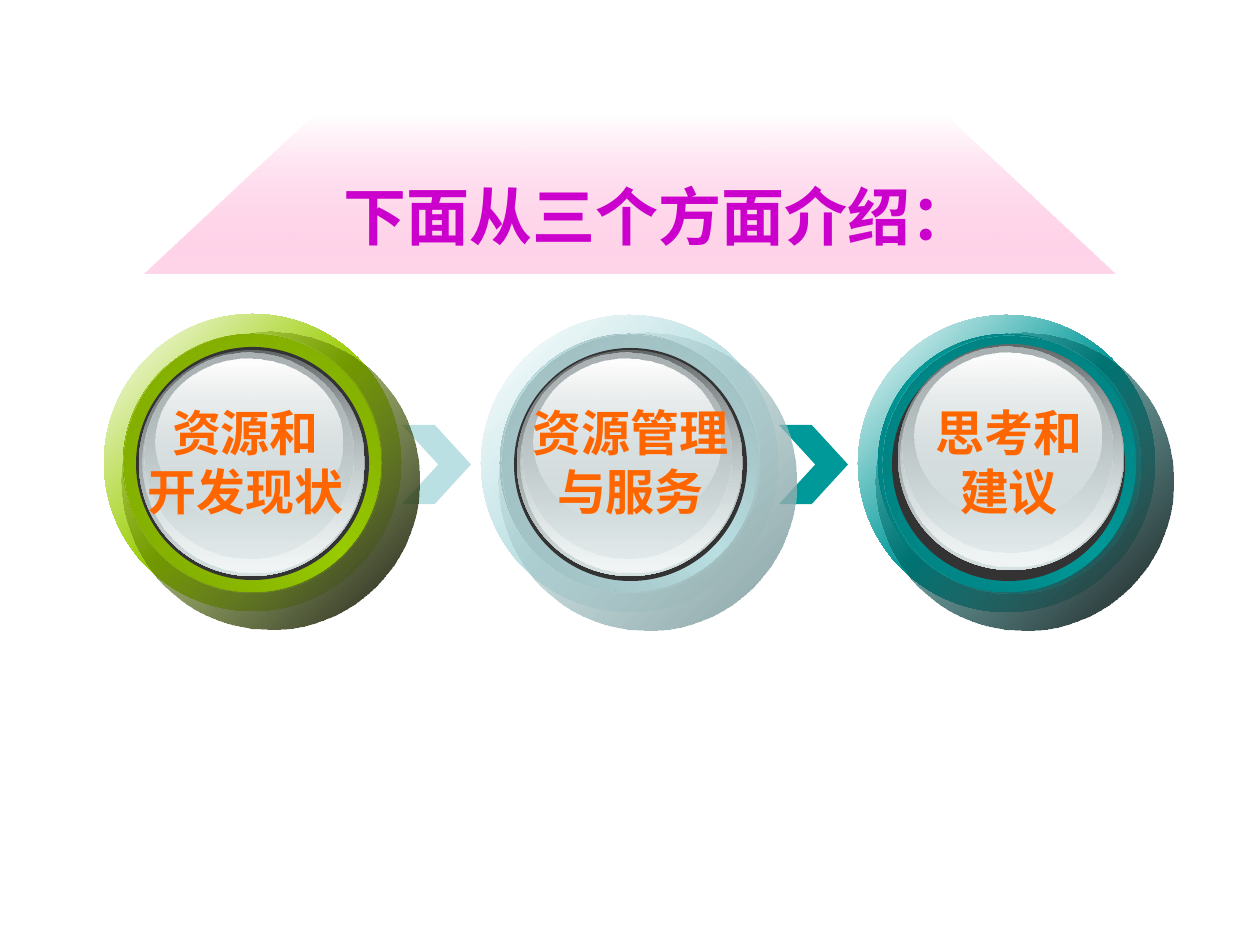
from lxml.etree import SubElement
from pptx import Presentation
from pptx.dml.color import RGBColor
from pptx.enum.shapes import MSO_SHAPE
from pptx.enum.text import MSO_ANCHOR, MSO_AUTO_SIZE, PP_ALIGN
from pptx.oxml.ns import qn
from pptx.util import Emu, Pt

PX_PER_INCH = 126
COLORS = {
    "white": "FFFFFF", "black": "000000", "bezel": "333333",
    "label": "FF6600", "title": "CC00CC", "pink": "FF99CC",
    "steel": "636869", "grey": "AAB2B3", "mist": "D6E1E2", "frost": "F1F5F5",
    "green": "99CC00", "green rim": "759C00", "green inner": "7EA700",
    "pale": "BBE0E3", "pale rim": "8FACAE", "pale inner": "9AB8BA", "pale shadow": "86A0A2",
    "teal": "009999", "teal rim": "007575", "teal inner": "007E7E",
}
DISC, PITCH = 297, 377
# Offsets are measured from the top left corner of each disc.
STEPS = [
    {"text": "资源和\n开发现状", "hue": "green", "shadow": ("black", 90), "top": 314, "rim": (19, 20),
     "inner": (19, 20), "bezel": (32, 33), "glass": (35, 36), "label": (30, 82, 223, 131)},
    {"text": "资源管理\n与服务", "hue": "pale", "shadow": ("pale shadow", 100), "top": 315, "rim": (19, 19),
     "inner": (20, 20), "bezel": (33, 33), "glass": (36, 35), "label": (38, 81, 223, 131)},
    {"text": "思考和\n建议", "hue": "teal", "shadow": ("black", 90), "top": 315, "rim": (20, 19),
     "inner": (24, 21), "bezel": (34, 33), "glass": (40, 29), "label": (64, 81, 174, 131)},
]
GLASS_LAYERS = [
    ((0, 0, 226, 226), [(0, "steel", 100), (100, "mist", 100)]),
    ((3, 1, 221, 221), [(0, "mist", 0), (100, "frost", 100)]),
    ((5, 3, 209, 205), [(0, "grey", 100), (100, "mist", 48)]),
    ((17, 9, 186, 166), [(0, "white", 100), (100, "mist", 38)]),
]


def px(length):
    return Emu(round(length * 914400 / PX_PER_INCH))


def rgb(name):
    return RGBColor.from_string(COLORS[name])


def fill_gradient(shape, stops, angle):
    """Fill with stops of (position %, colour name, opacity %)."""
    shape.fill.background()
    blank = shape._element.spPr.find(qn("a:noFill"))
    gradient = blank.makeelement(qn("a:gradFill"), {"rotWithShape": "1"})
    stop_list = SubElement(gradient, qn("a:gsLst"))
    for position, name, opacity in stops:
        stop = SubElement(stop_list, qn("a:gs"), pos=str(position * 1000))
        color = SubElement(stop, qn("a:srgbClr"), val=COLORS[name])
        if opacity < 100:
            SubElement(color, qn("a:alpha"), val=str(opacity * 1000))
    SubElement(gradient, qn("a:lin"), ang=str(angle * 60000), scaled="0")
    blank.getparent().replace(blank, gradient)


def finish(shape, paint, angle=0):
    """Paint a shape with a colour name or gradient stops, without line or shadow."""
    shape.shadow.inherit = False
    shape.line.fill.background()
    if isinstance(paint, str):
        shape.fill.solid()
        shape.fill.fore_color.rgb = rgb(paint)
    else:
        fill_gradient(shape, paint, angle)


def add_ellipse(page, left, top, width, height, paint, angle=0):
    shape = page.shapes.add_shape(MSO_SHAPE.OVAL, px(left), px(top), px(width), px(height))
    finish(shape, paint, angle)


def write_text(box, text, *, size, color, font, align, wrap):
    frame = box.text_frame
    frame.word_wrap = wrap
    frame.auto_size = MSO_AUTO_SIZE.SHAPE_TO_FIT_TEXT
    frame.vertical_anchor = MSO_ANCHOR.TOP
    frame.text = text
    for para in frame.paragraphs:
        para.alignment = align
        para.line_spacing = 1.0
        para.space_before = Pt(0)
        for span in para.runs:
            span.font.size = Pt(size)
            span.font.bold = True
            span.font.name = font
            span.font.color.rgb = rgb(color)
            SubElement(span.font._element, qn("a:ea"), typeface="Noto Sans CJK SC")


def add_disc(page, left, top, step):
    hue = step["hue"]
    rim, inner = f"{hue} rim", f"{hue} inner"
    rings = [
        ((0, 0), DISC, [(0, "white", 100), (50, hue, 100), (100, "white", 100)], 45),
        ((18, 18), DISC, [(0, hue, 32), (100, *step["shadow"])], 45),
        (step["rim"], 258, [(0, rim, 100), (50, hue, 100), (100, rim, 100)], 315),
        (step["inner"], 258, [(0, inner, 100), (100, hue, 0)], 45),
        (step["bezel"], 233, "bezel", 0),
    ]
    for (x, y), size, paint, angle in rings:
        add_ellipse(page, left + x, top + y, size, size, paint, angle)
    glass_x, glass_y = step["glass"]
    for (x, y, width, height), stops in GLASS_LAYERS:
        add_ellipse(page, left + glass_x + x, top + glass_y + y, width, height, stops, 90)
    x, y, width, height = step["label"]
    box = page.shapes.add_textbox(px(left + x), px(top + y), px(width), px(height))
    write_text(box, step["text"], size=28, color="label", font="Arial",
               align=PP_ALIGN.CENTER, wrap=False)


def add_chevron(page, left, top, color):
    chevron = page.shapes.add_shape(MSO_SHAPE.CHEVRON, px(left), px(top), px(69), px(79))
    chevron.adjustments[0] = 0.525
    finish(chevron, color)


def add_process(page, left, top):
    """Chevrons first, so that the discs overlap their tails."""
    for index, step in enumerate(STEPS[1:]):
        add_chevron(page, left + index * PITCH + DISC + 1, top + 110, step["hue"])
    for index, step in enumerate(STEPS):
        add_disc(page, left + index * PITCH, step["top"], step)


def add_banner(page, left, top, width, height):
    inset = 171
    outline = page.shapes.build_freeform(px(left), px(top + height))
    outline.add_line_segments([
        (px(left + inset), px(top)),
        (px(left + width - inset), px(top)),
        (px(left + width), px(top + height)),
    ], close=True)
    finish(outline.convert_to_shape(), [(0, "white", 100), (100, "pink", 40)], 90)

    title = page.shapes.title
    title.left, title.top = px(left + 187), px(top + 56)
    title.width, title.height = px(664), px(89)
    write_text(title, "下面从三个方面介绍：", size=36, color="title",
               font="Noto Sans CJK SC", align=PP_ALIGN.LEFT, wrap=True)
    page.shapes._spTree.append(title._element)


def main():
    deck = Presentation()
    deck.slide_width, deck.slide_height = px(1260), px(945)
    page = deck.slides.add_slide(deck.slide_layouts[5])
    add_process(page, 104, 315)
    add_banner(page, 144, 115, 972, 159)
    deck.save("out.pptx")


if __name__ == "__main__":
    main()
